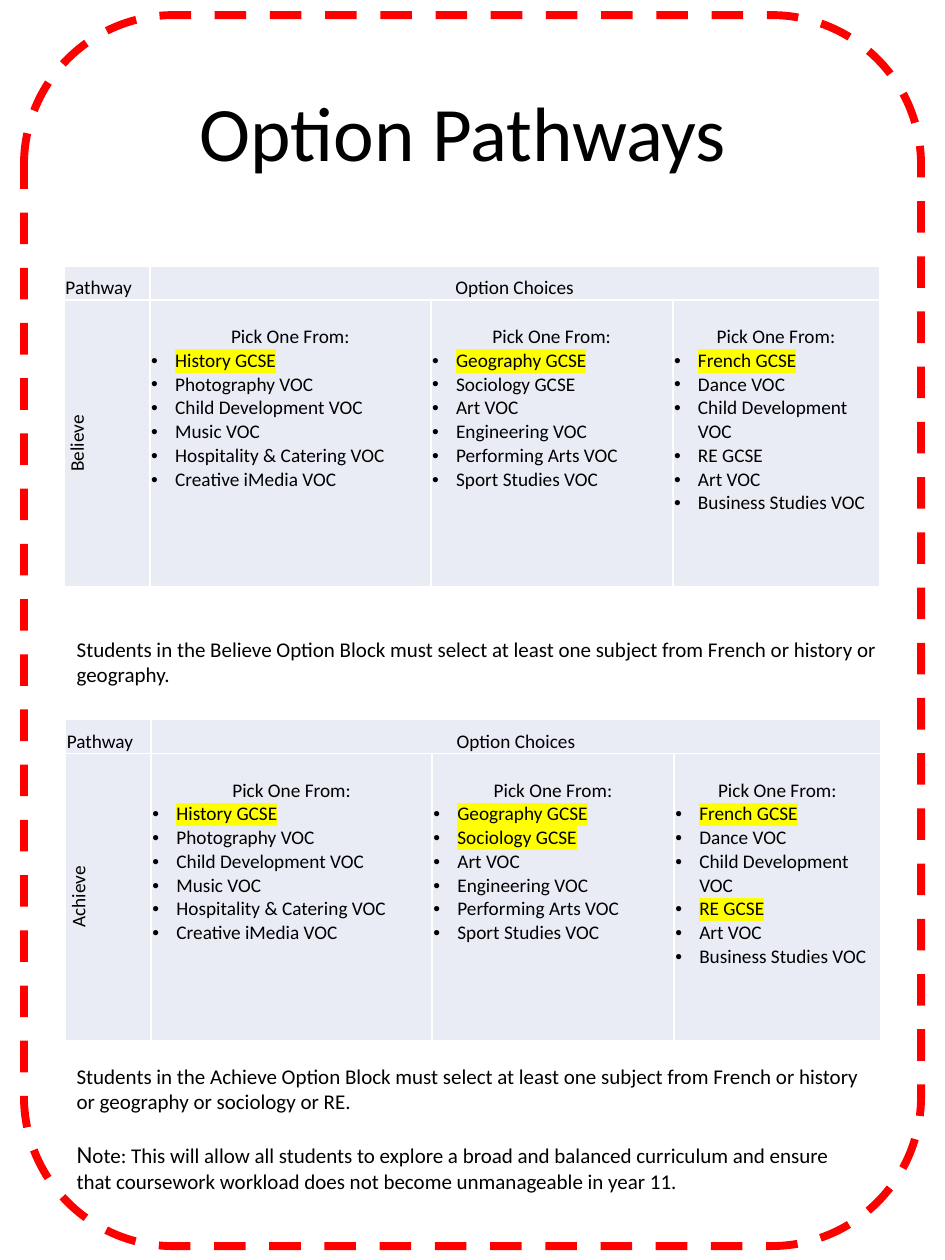
from dataclasses import dataclass

from lxml.etree import SubElement
from pptx import Presentation
from pptx.dml.color import RGBColor
from pptx.enum.dml import MSO_LINE
from pptx.enum.shapes import MSO_SHAPE as Shape
from pptx.enum.text import MSO_ANCHOR as Anchor, PP_ALIGN as Align
from pptx.oxml.ns import qn
from pptx.util import Inches, Pt

COLUMNS, ROWS = 75, 100  # grid over the page
UNIT = Inches(0.1)


@dataclass(frozen=True)
class Theme:
    font: str = "Calibri"
    ink: str = "000000"
    frame: str = "FF0000"
    cell: str = "E9EBF5"
    rule: str = "FFFFFF"
    marker: str = "FFFF00"
    title: float = 44
    lead: float = 14
    body: float = 12
    table: float = 11
    frame_width: float = 4.5
    rule_width: float = 1


def grid(*lengths):
    return [round(length * UNIT) for length in lengths]


def add_color(parent, color):
    SubElement(SubElement(parent, qn("a:solidFill")), qn("a:srgbClr"), val=color)


class OptionsPage:
    def __init__(self, deck, theme):
        self.theme = theme
        self.page = deck.slides.add_slide(deck.slide_layouts[6])

    def frame(self, *place):
        shape = self.page.shapes.add_shape(Shape.ROUNDED_RECTANGLE, *grid(*place))
        shape.shadow.inherit = False
        shape.fill.background()
        shape.line.color.rgb = RGBColor.from_string(self.theme.frame)
        shape.line.width = Pt(self.theme.frame_width)
        shape.line.dash_style = MSO_LINE.DASH

    def span(self, para, text, size, marked=False):
        span = para.add_run()
        span.text = text
        span.font.size = Pt(size)
        span.font.color.rgb = RGBColor.from_string(self.theme.ink)
        span.font.name = self.theme.font
        if marked:
            properties = span._r.get_or_add_rPr()
            highlight = SubElement(properties, qn("a:highlight"))
            SubElement(highlight, qn("a:srgbClr"), val=self.theme.marker)
            properties.find(qn("a:solidFill")).addnext(highlight)

    def text(self, place, paragraphs, gap=0, align=Align.LEFT,
             anchor=Anchor.TOP, spacing=1.0):
        """Each paragraph is a list of (text, size) runs."""
        frame = self.page.shapes.add_textbox(*grid(*place)).text_frame
        frame.word_wrap = True
        frame.vertical_anchor = anchor
        for index, runs in enumerate(paragraphs):
            para = frame.add_paragraph() if index else frame.paragraphs[0]
            para.alignment = align
            para.line_spacing = spacing
            if index:
                para.space_before = Pt(gap)
            for text, size in runs:
                self.span(para, text, size)

    def style_cell(self, cell, anchor):
        properties = cell._tc.get_or_add_tcPr()
        for side in ("a:lnL", "a:lnR", "a:lnT", "a:lnB"):
            line = SubElement(properties, qn(side), w=str(Pt(self.theme.rule_width)))
            add_color(line, self.theme.rule)
        cell.fill.solid()
        cell.fill.fore_color.rgb = RGBColor.from_string(self.theme.cell)
        cell.margin_left = cell.margin_right = cell.margin_top = Inches(0.01)
        cell.margin_bottom = 0
        cell.vertical_anchor = anchor

    def label(self, cell, text, align):
        para = cell.text_frame.paragraphs[0]
        para.alignment = align
        self.span(para, text, self.theme.table)

    def choices(self, cell, subjects, marked):
        cell.margin_top = Inches(0.2)
        self.label(cell, "Pick One From:", Align.CENTER)
        for subject in subjects:
            para = cell.text_frame.add_paragraph()
            properties = para._p.get_or_add_pPr()
            properties.set("marL", str(Inches(0.19)))
            properties.set("indent", str(-Inches(0.19)))
            SubElement(properties, qn("a:buFont"), typeface="Arial")
            SubElement(properties, qn("a:buChar"), char="•")
            self.span(para, subject, self.theme.table, subject in marked)

    def pathway(self, place, widths, heights, name, blocks, marked):
        shape = self.page.shapes.add_table(
            len(heights), len(widths), *grid(*place, sum(widths), sum(heights)))
        table = shape.table
        table.first_row = table.horz_banding = False
        for column, width in zip(table.columns, grid(*widths)):
            column.width = width
        for row, height in zip(table.rows, grid(*heights)):
            row.height = height
        for index in range(len(widths)):
            self.style_cell(table.cell(0, index), Anchor.BOTTOM)
            self.style_cell(table.cell(1, index), Anchor.TOP)
        # Heading row
        table.cell(0, 1).merge(table.cell(0, len(widths) - 1))
        self.label(table.cell(0, 0), "Pathway", Align.LEFT)
        self.label(table.cell(0, 1), "Option Choices", Align.CENTER)
        # Pathway name and its option blocks
        side = table.cell(1, 0)
        side._tc.get_or_add_tcPr().set("vert", "vert270")
        self.label(side, name, Align.CENTER)
        for index, subjects in enumerate(blocks, start=1):
            self.choices(table.cell(1, index), subjects, marked)


BLOCKS = [
    ["History GCSE", "Photography VOC", "Child Development VOC", "Music VOC",
     "Hospitality & Catering VOC", "Creative iMedia VOC"],
    ["Geography GCSE", "Sociology GCSE", "Art VOC", "Engineering VOC",
     "Performing Arts VOC", "Sport Studies VOC"],
    ["French GCSE", "Dance VOC", "Child Development VOC", "RE GCSE",
     "Art VOC", "Business Studies VOC"],
]
CORE = {"History GCSE", "Geography GCSE", "French GCSE"}
PATHWAYS = [
    ("Believe", (5.1, 21.1), CORE),
    ("Achieve", (5.2, 57.1), CORE | {"Sociology GCSE", "RE GCSE"}),
]
WIDTHS, HEIGHTS = (6.8, 22.3, 19.2, 16.4), (2.7, 22.8)


def main():
    theme = Theme()
    deck = Presentation()
    deck.slide_width, deck.slide_height = grid(COLUMNS, ROWS)
    sheet = OptionsPage(deck, theme)

    # Frame and title
    sheet.frame(1.9, 1.2, 71.2, 97.7)
    sheet.text((5.1, 1.2, 64.7, 19.3), [[("Option Pathways ", theme.title)]],
               align=Align.CENTER, anchor=Anchor.MIDDLE, spacing=0.9)

    # Pathway tables
    for name, place, marked in PATHWAYS:
        sheet.pathway(place, WIDTHS, HEIGHTS, name, BLOCKS, marked)

    # Rules for each pathway
    sheet.text((5.1, 50, 66.1, 7.1), [[
        ("Students in the Believe Option Block must select at least one subject "
         "from French or history or geography.", theme.body)]])
    sheet.text((5.1, 83.9, 64.6, 11.4), [
        [("Students in the Achieve Option Block must select at least one subject "
          "from French or history or geography or sociology or RE.", theme.body)],
        [("N", theme.lead),
         ("ote: This will allow all students to explore a broad and balanced "
          "curriculum and ensure that coursework workload does not become "
          "unmanageable in year 11.", theme.body)],
    ], gap=14.6)

    deck.save("out.pptx")


if __name__ == "__main__":
    main()
